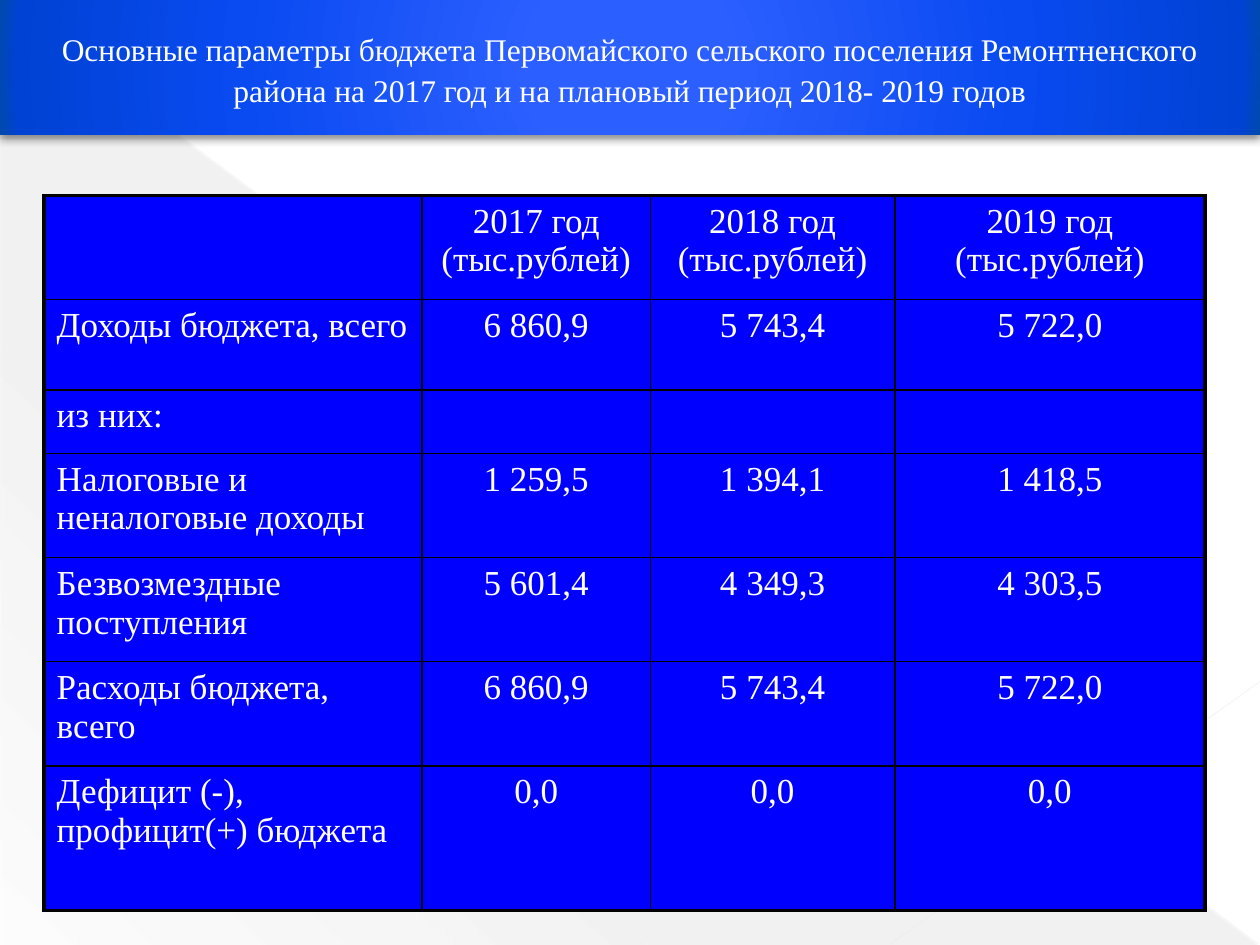
"""Builds the slide with the main budget figures for 2017 to 2019."""
import dataclasses

import lxml.etree
import pptx
import pptx.dml.color
import pptx.enum.shapes
import pptx.enum.text
import pptx.oxml.ns
import pptx.util

Cm = pptx.util.Cm
Pt = pptx.util.Pt
qn = pptx.oxml.ns.qn
Align = pptx.enum.text.PP_ALIGN
Shape = pptx.enum.shapes.MSO_SHAPE

WIDTH, HEIGHT = 25.4, 19.05
TITLE = ("Основные параметры бюджета Первомайского сельского поселения "
         "Ремонтненского района на 2017 год и на плановый период 2018- 2019 годов")
ROWS = [
    ("", "2017 год (тыс.рублей)", "2018 год (тыс.рублей)", "2019 год (тыс.рублей)"),
    ("Доходы бюджета, всего", "6 860,9", "5 743,4", "5 722,0"),
    ("из них:", "", "", ""),
    ("Налоговые и неналоговые доходы", "1 259,5", "1 394,1", "1 418,5"),
    ("Безвозмездные поступления", "5 601,4", "4 349,3", "4 303,5"),
    ("Расходы бюджета, всего", "6 860,9", "5 743,4", "5 722,0"),
    ("Дефицит (-), профицит(+) бюджета", "0,0", "0,0", "0,0"),
]
WIDTHS = [7.62, 4.6, 4.93, 6.25]
HEIGHTS = [2.1, 1.82, 1.28, 2.1, 2.1, 2.1, 2.91]


@dataclasses.dataclass(frozen=True)
class Theme:
    """Colours, fonts and sizes of the slide."""
    font: str = "Times New Roman"
    title: int = 18
    body: int = 20
    text: str = "FFFFFF"
    cell: str = "0000FF"
    edge: str = "000000"
    thin: float = 1
    thick: float = 2.25
    long: str = "E8E8E8"
    short: str = "EAEAEA"
    wedge: tuple = ((0, "666666", 10), (70, "666666", 8), (100, "666666", 1))
    band: tuple = ((0, "2D60FF", 100), (15, "2C5FFF", 100), (62, "094AF1", 100),
                   (97, "0042D3", 100), (100, "004AAB", 100))


def node(base, tag, **attrs):
    """Add a drawing element under base."""
    return lxml.etree.SubElement(base, qn("a:" + tag),
                                 {key: str(val) for key, val in attrs.items()})


def tint(base, color, alpha=100):
    """Add a colour with its opacity in percent."""
    item = node(base, "srgbClr", val=color)
    if alpha < 100:
        node(item, "alpha", val=alpha * 1000)


def write(frame, text, *, font, size, color, align=Align.LEFT, before=0, pitch=1.0):
    """Put one formatted paragraph into a text frame."""
    frame.word_wrap = True
    para = frame.paragraphs[0]
    para.alignment = align
    para.space_before = Pt(before)
    para.line_spacing = pitch
    run = para.add_run()
    run.text = text
    run.font.name = font
    run.font.size = Pt(size)
    run.font.color.rgb = pptx.dml.color.RGBColor.from_string(color)


class Page:
    """Holds the theme and the current slide."""

    def __init__(self, slide, theme):
        self.slide = slide
        self.theme = theme

    def shape(self, kind, box, stops, angle=None):
        """Add a shape with a linear fill, or a round one without an angle."""
        item = self.slide.shapes.add_shape(kind, *map(Cm, box))
        item.shadow.inherit = False
        item.fill.gradient()
        item.line.fill.background()
        grad = item._element.spPr.find(qn("a:gradFill"))
        grad.clear()
        grad.set("rotWithShape", "1")
        group = node(grad, "gsLst")
        for place, color, alpha in stops:
            tint(node(group, "gs", pos=place * 1000), color, alpha)
        if angle is None:
            node(node(grad, "path", path="circle"), "fillToRect",
                 l=50000, t=50000, r=50000, b=50000)
        else:
            node(grad, "lin", ang=angle * 60000, scaled=0)
        return item

    def line(self, start, end, color, width, alpha):
        """Add a thin, partly clear line."""
        kind = pptx.enum.shapes.MSO_CONNECTOR.STRAIGHT
        item = self.slide.shapes.add_connector(kind, *map(Cm, start + end))
        item.line.width = Pt(width)
        item.line.fill.solid()
        props = item._element.spPr
        fill = props.find(qn("a:ln")).find(qn("a:solidFill"))
        fill.clear()
        tint(fill, color, alpha)
        node(props, "effectLst")

    def header(self, text, height):
        """Add the title band with its shadow."""
        theme = self.theme
        item = self.shape(Shape.RECTANGLE, (0, 0, WIDTH, height), theme.band)
        shade = node(item._element.spPr.find(qn("a:effectLst")), "outerShdw",
                     blurRad=Pt(5), dist=Pt(2), dir=90 * 60000, rotWithShape=0)
        tint(shade, theme.edge, 43)
        item.text_frame.vertical_anchor = pptx.enum.text.MSO_ANCHOR.MIDDLE
        write(item.text_frame, text, font=theme.font, size=theme.title,
              color=theme.text, align=Align.CENTER, pitch=1.1)

    def border(self, cell, outer):
        """Draw cell borders, thick on the outer sides."""
        props = cell._tc.get_or_add_tcPr()
        for side in "LRTB":
            width = self.theme.thick if side in outer else self.theme.thin
            edge = node(props, "ln" + side, w=Pt(width))
            tint(node(edge, "solidFill"), self.theme.edge)

    def table(self, left, top, rows, widths, heights):
        """Add the table of figures."""
        theme = self.theme
        size = map(Cm, (left, top, sum(widths), sum(heights)))
        grid = self.slide.shapes.add_table(len(rows), len(widths), *size).table
        grid.first_row = grid.horz_banding = False
        for col, width in zip(grid.columns, widths):
            col.width = Cm(width)
        for row, height in zip(grid.rows, heights):
            row.height = Cm(height)
        for y, row in enumerate(rows):
            for x, text in enumerate(row):
                cell = grid.cell(y, x)
                ends = {"L": x == 0, "R": x == len(row) - 1,
                        "T": y == 0, "B": y == len(rows) - 1}
                self.border(cell, [side for side, end in ends.items() if end])
                cell.fill.solid()
                cell.fill.fore_color.rgb = pptx.dml.color.RGBColor.from_string(theme.cell)
                if text:
                    write(cell.text_frame, text, font=theme.font, size=theme.body,
                          color=theme.text, before=4,
                          align=Align.CENTER if x else Align.LEFT)


def main():
    """Build and save the deck."""
    deck = pptx.Presentation()
    deck.slide_width, deck.slide_height = Cm(WIDTH), Cm(HEIGHT)
    theme = Theme()
    page = Page(deck.slides.add_slide(deck.slide_layouts[6]), theme)
    page.shape(Shape.RIGHT_TRIANGLE, (0.02, 0.05, 25.35, 19), theme.wedge, 133)
    page.line((0, 0.02), (25.37, 19.03), theme.long, 0.39, 35)
    page.line((25.4, 13.74), (17.95, 19.03), theme.short, 0.47, 45)
    page.header(TITLE, 2.72)
    page.table(0.89, 3.94, ROWS, WIDTHS, HEIGHTS)
    deck.save("out.pptx")


if __name__ == "__main__":
    main()
